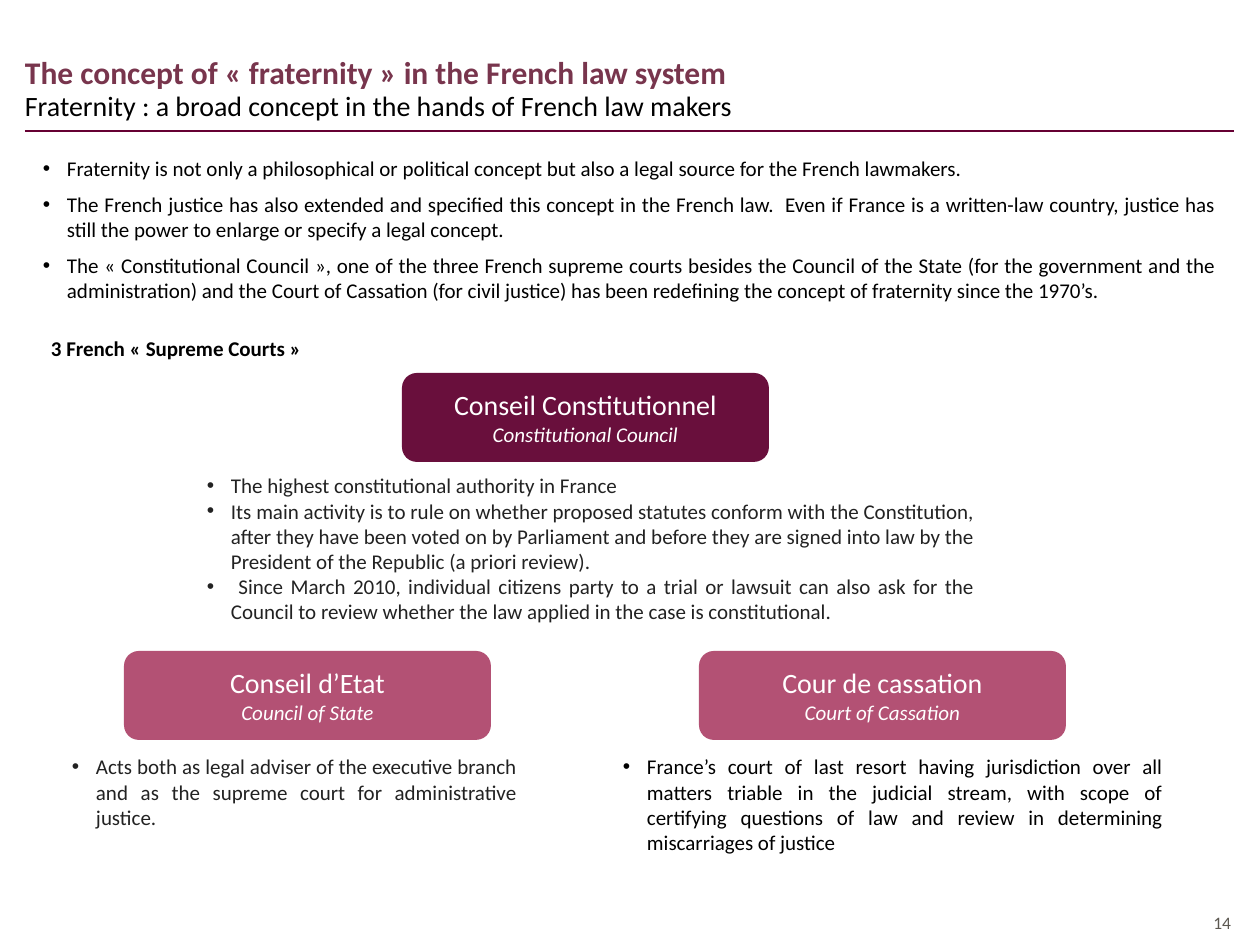
from lxml import etree
from pptx import Presentation
from pptx import util as u
from pptx.dml.color import RGBColor
from pptx.enum import shapes, text
from pptx.oxml.ns import qn

EMU_PER_PX = 914400 / 126
FONT = "Calibri"
PLUM, DARK_PLUM, ROSE, RULE = "78354D", "690F3C", "B35174", "660033"
BLACK, CHARCOAL, GREY, WHITE = "000000", "222222", "5C5851", "FFFFFF"
INSET, NARROW_INSET = 13, 6
BULLET_INDENT = 24
COURT_SIZE = (367, 89)


def px(length):
    return u.Emu(round(length * EMU_PER_PX))


def rgb(hex_colour):
    return RGBColor.from_string(hex_colour)


class SlideBuilder:
    """Holds the slide being built and the style of its elements."""

    def __init__(self, slide):
        self.slide = slide

    def style(self, paragraph, size, colour, bold=False, italic=False):
        for run in paragraph.runs:
            run.font.name = FONT
            run.font.size = u.Pt(size)
            run.font.bold = bold
            run.font.italic = italic
            run.font.color.rgb = rgb(colour)

    def text_box(self, box, content, size=12, colour=BLACK, bold=False,
                 align=text.PP_ALIGN.LEFT, left_inset=INSET, right_inset=INSET):
        frame = self.slide.shapes.add_textbox(*map(px, box)).text_frame
        frame.word_wrap = True
        frame.margin_left, frame.margin_right = px(left_inset), px(right_inset)
        frame.margin_top = frame.margin_bottom = px(NARROW_INSET)
        frame.text = content
        for paragraph in frame.paragraphs:
            paragraph.alignment = align
            self.style(paragraph, size, colour, bold)
        return frame

    def bullets(self, box, items, colour=BLACK, space_after=0):
        frame = self.text_box(box, "\n".join(items), colour=colour,
                              align=text.PP_ALIGN.JUSTIFY)
        for paragraph in frame.paragraphs:
            paragraph.space_after = u.Pt(space_after)
            properties = paragraph._p.get_or_add_pPr()
            properties.set("marL", str(px(BULLET_INDENT)))
            properties.set("indent", str(-px(BULLET_INDENT)))
            etree.SubElement(properties, qn("a:buFont")).set("typeface", "Arial")
            etree.SubElement(properties, qn("a:buChar")).set("char", "•")

    def court(self, left, top, french, english, fill):
        """Add a rounded box with a court's name and its translation."""
        box = self.slide.shapes.add_shape(
            shapes.MSO_SHAPE.ROUNDED_RECTANGLE, *map(px, (left, top, *COURT_SIZE)))
        box.shadow.inherit = False
        box.fill.solid()
        box.fill.fore_color.rgb = rgb(fill)
        box.line.fill.background()
        frame = box.text_frame
        frame.word_wrap = True
        frame.vertical_anchor = text.MSO_ANCHOR.MIDDLE
        frame.text = f"{french}\n{english}"
        name, translation = frame.paragraphs
        name.alignment = translation.alignment = text.PP_ALIGN.CENTER
        self.style(name, 16, WHITE)
        self.style(translation, 12, WHITE, italic=True)

    def rule(self, left, right, y, colour):
        line = self.slide.shapes.add_connector(
            shapes.MSO_CONNECTOR.STRAIGHT, *map(px, (left, y, right, y)))
        line.line.color.rgb = rgb(colour)
        line.line.width = u.Pt(1)
        etree.SubElement(line._element.spPr, qn("a:effectLst"))


def main():
    deck = Presentation()
    deck.slide_width, deck.slide_height = px(1260), px(945)
    page = SlideBuilder(deck.slides.add_slide(deck.slide_layouts[6]))

    page.rule(25, 1234, 131, RULE)
    page.text_box((804, 906, 427, 34), "14", 10, GREY,
                  align=text.PP_ALIGN.RIGHT, left_inset=0, right_inset=0)
    page.text_box((25, 83, 1210, 45),
                  "Fraternity : a broad concept in the hands of French law makers",
                  16, left_inset=0)
    page.text_box((25, 47, 1210, 40),
                  "The concept of « fraternity » in the French law system",
                  18, PLUM, bold=True, left_inset=0)

    page.bullets((30, 150, 1200, 270), [
        "Fraternity is not only a philosophical or political concept but also a "
        "legal source for the French lawmakers.",
        "The French justice has also extended and specified this concept in the "
        "French law.  Even if France is a written-law country, justice has still "
        "the power to enlarge or specify a legal concept.",
        "The « Constitutional Council », one of the three French supreme courts "
        "besides the Council of the State (for the government and the "
        "administration) and the Court of Cassation (for civil justice) has been "
        "redefining the concept of fraternity since the 1970’s.",
    ], space_after=6)

    page.text_box((38, 330, 515, 38), "3 French « Supreme Courts »", bold=True)

    page.court(402, 373, "Conseil Constitutionnel", "Constitutional Council", DARK_PLUM)
    page.bullets((194, 467, 794, 165), [
        "The highest constitutional authority in France",
        "Its main activity is to rule on whether proposed statutes conform with "
        "the Constitution, after they have been voted on by Parliament and before "
        "they are signed into law by the President of the Republic (a priori review).",
        " Since March 2010, individual citizens party to a trial or lawsuit can "
        "also ask for the Council to review whether the law applied in the case is "
        "constitutional.",
    ], CHARCOAL)

    page.court(124, 651, "Conseil d’Etat", "Council of State", ROSE)
    page.bullets((59, 748, 471, 89), [
        "Acts both as legal adviser of the executive branch and as the supreme "
        "court for administrative justice.",
    ], CHARCOAL)

    page.court(699, 651, "Cour de cassation", "Court of Cassation", ROSE)
    page.bullets((610, 748, 566, 115), [
        "France’s court of last resort having jurisdiction over all matters "
        "triable in the judicial stream, with scope of certifying questions of law "
        "and review in determining miscarriages of justice",
    ])

    deck.save("out.pptx")


if __name__ == "__main__":
    main()
